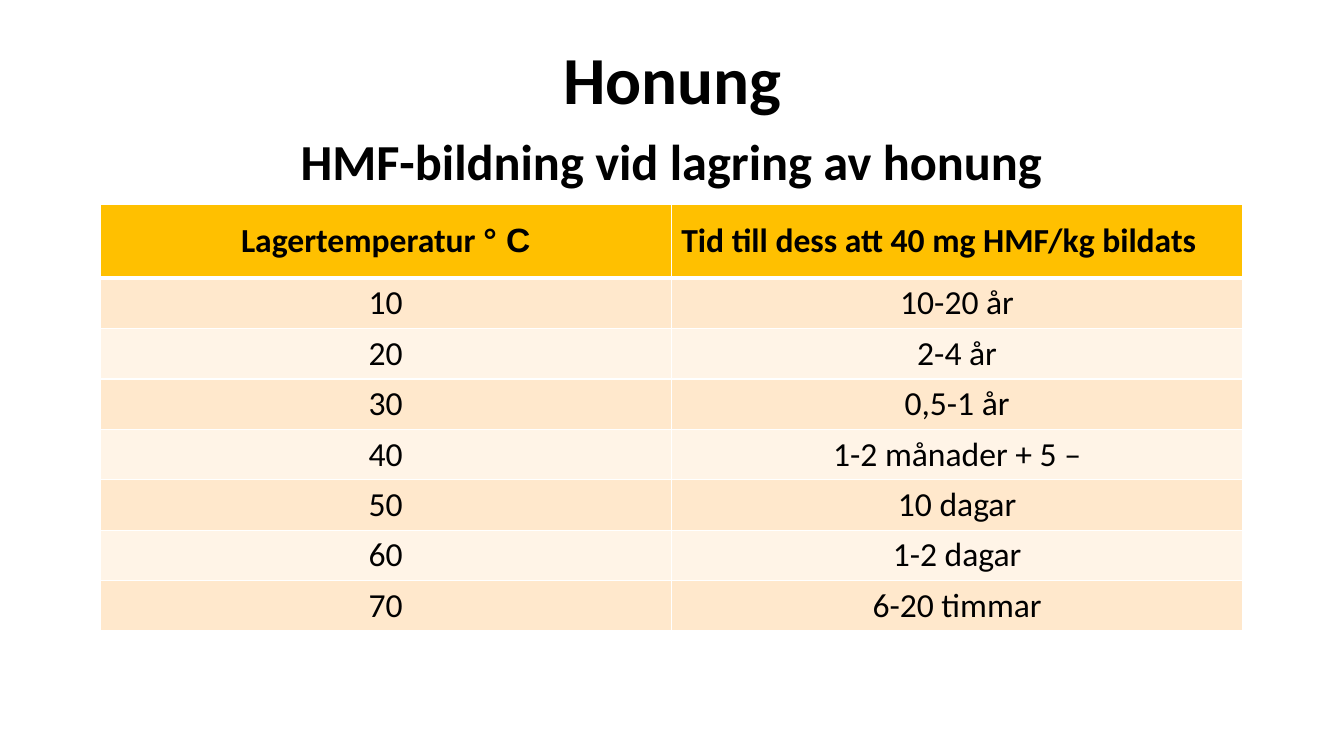
from lxml import etree
from pptx import Presentation
from pptx.dml.color import RGBColor
from pptx.enum import text as t
from pptx.oxml import ns
from pptx.util import Cm, Pt

TITLE = "Honung"
SUBTITLE = "HMF-bildning vid lagring av honung"
HEADINGS = ("Lagertemperatur ", "Tid till dess att 40 mg HMF/kg bildats")
UNIT = "° C"
STORAGE_TIMES = [
    ("10", "10-20 år"),
    ("20", "2-4 år"),
    ("30", "0,5-1 år"),
    ("40", "1-2 månader + 5 –"),
    ("50", "10 dagar"),
    ("60", "1-2 dagar"),
    ("70", "6-20 timmar"),
]

BLACK = RGBColor(0, 0, 0)
WHITE = RGBColor(255, 255, 255)
HONEY = RGBColor(0xFF, 0xC0, 0x00)
BANDS = (RGBColor(0xFF, 0xE8, 0xCC), RGBColor(0xFF, 0xF4, 0xE7))

TABLE_LEFT, TABLE_TOP = Cm(2.52), Cm(5.16)
COLUMN_WIDTH = Cm(14.4)
HEADING_HEIGHT, ROW_HEIGHT = Cm(1.85), Cm(1.27)


def add_text(paragraph, wording, size=24, bold=False, font="Calibri",
             align=t.PP_ALIGN.CENTER):
    paragraph.alignment = align
    run = paragraph.add_run()
    run.text = wording
    run.font.name = font
    run.font.size = Pt(size)
    run.font.bold = bold
    run.font.color.rgb = BLACK


def fill_placeholder(holder, wording, size, left, top, width, height):
    holder.left, holder.top = Cm(left), Cm(top)
    holder.width, holder.height = Cm(width), Cm(height)
    frame = holder.text_frame
    frame.word_wrap = True
    frame.auto_size = t.MSO_AUTO_SIZE.NONE
    frame.vertical_anchor = t.MSO_ANCHOR.MIDDLE
    frame.paragraphs[0].space_before = Pt(0)
    add_text(frame.paragraphs[0], wording, size=size, bold=True)


def style_cell(cell, colour, bottom_width=1):
    """Set fill, margins and white borders of one cell."""
    cell.fill.solid()
    cell.fill.fore_color.rgb = colour
    cell.vertical_anchor = t.MSO_ANCHOR.MIDDLE
    cell.margin_top = cell.margin_bottom = Cm(0.11)
    cell.margin_left = cell.margin_right = Cm(0.25)
    properties = cell._tc.get_or_add_tcPr()
    widths = {"lnL": 1, "lnR": 1, "lnT": 1, "lnB": bottom_width}
    for position, (side, width) in enumerate(widths.items()):
        border = etree.Element(ns.qn(f"a:{side}"), w=str(Pt(width)))
        solid = etree.SubElement(border, ns.qn("a:solidFill"))
        etree.SubElement(solid, ns.qn("a:srgbClr"), val=str(WHITE))
        properties.insert(position, border)


def add_storage_table(slide):
    row_count = len(STORAGE_TIMES) + 1
    table = slide.shapes.add_table(
        row_count, len(HEADINGS), TABLE_LEFT, TABLE_TOP,
        COLUMN_WIDTH * len(HEADINGS),
        HEADING_HEIGHT + ROW_HEIGHT * len(STORAGE_TIMES)).table
    for column in table.columns:
        column.width = COLUMN_WIDTH
    for row in table.rows:
        row.height = ROW_HEIGHT
    table.rows[0].height = HEADING_HEIGHT

    aligns = (t.PP_ALIGN.CENTER, t.PP_ALIGN.LEFT)
    for column, (heading, align) in enumerate(zip(HEADINGS, aligns)):
        cell = table.cell(0, column)
        style_cell(cell, HONEY, bottom_width=3)
        add_text(cell.text_frame.paragraphs[0], heading, bold=True, align=align)
    add_text(table.cell(0, 0).text_frame.paragraphs[0], UNIT, bold=True, font="Arial")

    for row, values in enumerate(STORAGE_TIMES, start=1):
        for column, value in enumerate(values):
            cell = table.cell(row, column)
            style_cell(cell, BANDS[(row - 1) % 2], bottom_width=1)
            if row == 1:
                cell._tc.tcPr.find(ns.qn("a:lnT")).set("w", str(Pt(3)))
            add_text(cell.text_frame.paragraphs[0], value)


def main():
    deck = Presentation()
    deck.slide_width, deck.slide_height = Cm(33.87), Cm(19.05)
    slide = deck.slides.add_slide(deck.slide_layouts[0])
    title, subtitle = slide.placeholders
    fill_placeholder(title, TITLE, 48, 1.68, 0.79, 30.53, 2.31)
    fill_placeholder(subtitle, SUBTITLE, 36, 7.26, 3.15, 19.33, 1.8)
    add_storage_table(slide)
    deck.save("out.pptx")


if __name__ == "__main__":
    main()
